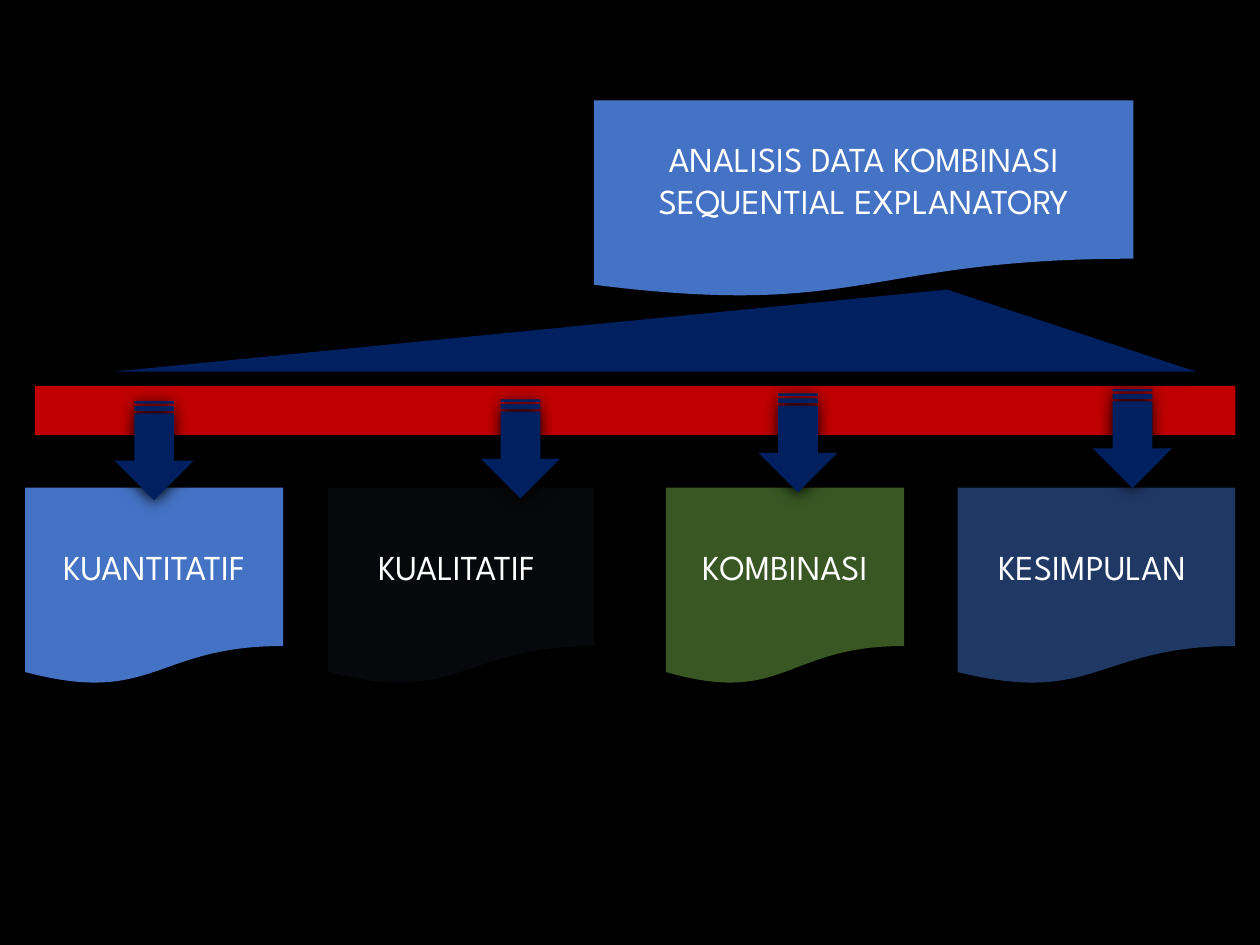
from lxml import etree
from pptx import Presentation
from pptx.dml.color import RGBColor
from pptx.enum.shapes import MSO_SHAPE
from pptx.enum.text import MSO_ANCHOR, PP_ALIGN
from pptx.oxml.ns import qn
from pptx.util import Pt

PAGE = MSO_SHAPE.FLOWCHART_DOCUMENT
BAR = MSO_SHAPE.RECTANGLE
ARROW = MSO_SHAPE.STRIPED_RIGHT_ARROW
ROOF = MSO_SHAPE.ISOSCELES_TRIANGLE
MIDDLE = MSO_ANCHOR.MIDDLE
CENTER = PP_ALIGN.CENTER

BLUE, NAVY, RED, WHITE = "4472C4", "002060", "C00000", "FFFFFF"
FONT = {"name": "League Spartan", "size": Pt(20)}
SHADE = {"blurRad": Pt(8.5), "dist": Pt(1), "dir": 90 * 60000,
         "algn": "t", "rotWithShape": 0}

ROW_TOP, PAGE_HIGH = 278.7, 112.8
ARROW_LONG, ARROW_WIDE = 56.6, 45.2

# label, left, width, fill, arrow left, arrow top
STEPS = [
    ("KUANTITATIF", 14.4, 147.4, BLUE, 59.8, 234.9),
    ("KUALITATIF ", 187.2, 152.4, "07080B", 269.1, 233.9),
    ("KOMBINASI", 380.5, 136.1, "385723", 427.7, 230.5),
    ("KESIMPULAN ", 547.2, 158.6, "203864", 618.8, 228),
]


def paint(fill, code):
    fill.solid()
    fill.fore_color.rgb = RGBColor.from_string(code)


def add_shade(shape):
    """Give the shape a soft black shadow just below it."""
    shape.shadow.inherit = False
    effects = shape._element.spPr.find(qn("a:effectLst"))
    outer = etree.SubElement(effects, qn("a:outerShdw"))
    for key, value in SHADE.items():
        outer.set(key, str(value))
    etree.SubElement(outer, qn("a:srgbClr"), val="000000")


def add_block(slide, kind, box, code):
    shape = slide.shapes.add_shape(kind, *map(Pt, box))
    paint(shape.fill, code)
    shape.line.fill.background()
    add_shade(shape)
    return shape


def add_page(slide, text, box, code):
    frame = add_block(slide, PAGE, box, code).text_frame
    frame.word_wrap = True
    frame.vertical_anchor = MIDDLE
    line = frame.paragraphs[0]
    line.alignment = CENTER
    run = line.add_run()
    run.text = text
    for key, value in FONT.items():
        setattr(run.font, key, value)
    run.font.color.rgb = RGBColor.from_string(WHITE)


def main():
    deck = Presentation()
    deck.slide_width, deck.slide_height = Pt(720), Pt(540)
    slide = deck.slides.add_slide(deck.slide_layouts[6])
    paint(slide.background.fill, "000000")

    # Title and the four steps
    add_page(slide, "ANALISIS DATA KOMBINASI SEQUENTIAL EXPLANATORY",
             (339.6, 57.4, 308, PAGE_HIGH), BLUE)
    for text, left, width, code, *_ in STEPS:
        add_page(slide, text, (left, ROW_TOP, width, PAGE_HIGH), code)

    # Red bar with an arrow down to each step
    add_block(slide, BAR, (19.9, 220.5, 686, 28.1), RED)
    for *_, left, top in STEPS:
        box = (left, top, ARROW_LONG, ARROW_WIDE)
        add_block(slide, ARROW, box, NAVY).rotation = 90

    # Roof that spreads from the title to the bar
    roof = add_block(slide, ROOF, (65.5, 165.5, 617.8, 46.8), NAVY)
    roof.adjustments[0] = 0.77

    deck.save("out.pptx")


if __name__ == "__main__":
    main()
